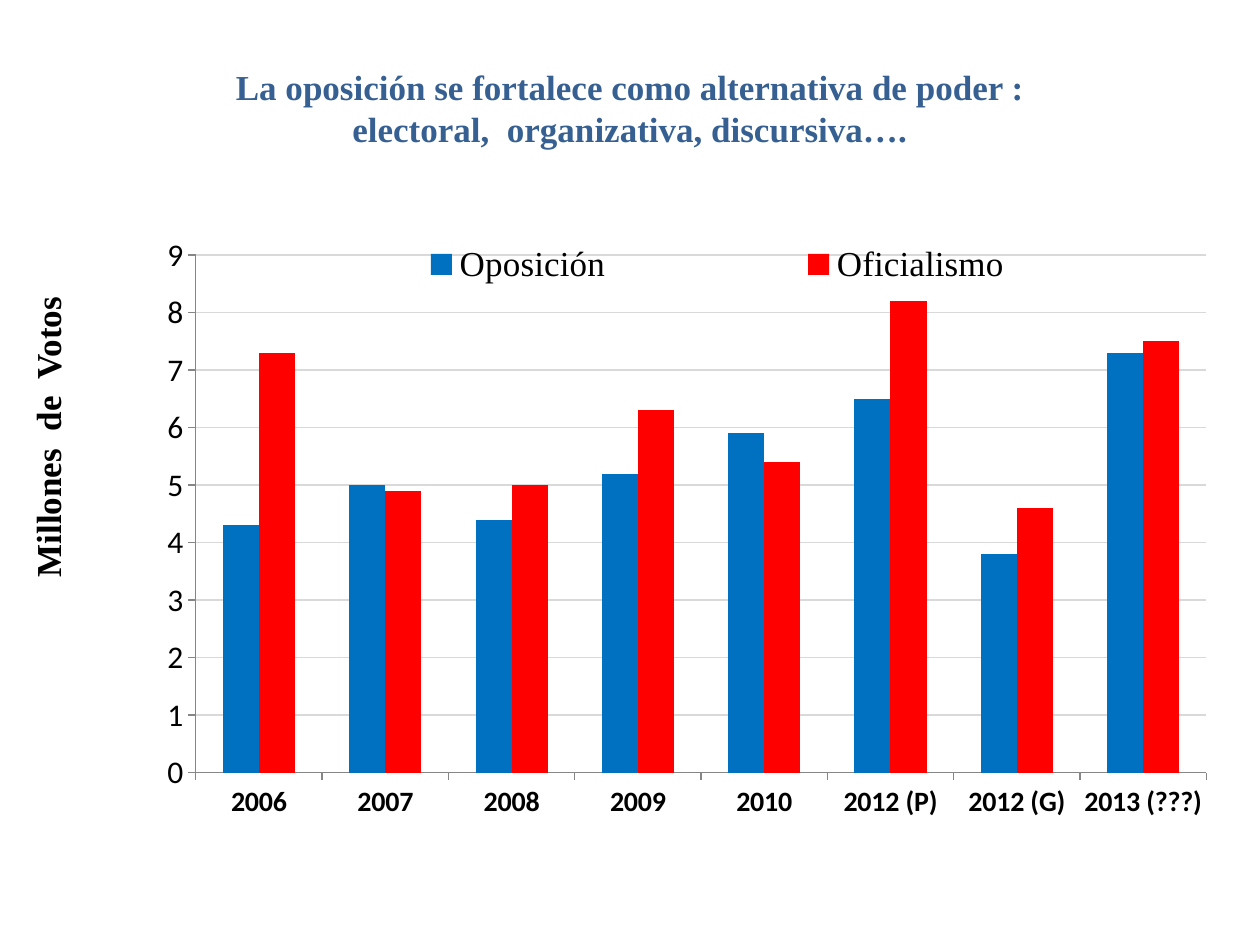
from dataclasses import dataclass

from lxml import etree
from pptx import Presentation
from pptx.chart.data import CategoryChartData
from pptx.dml.color import RGBColor
from pptx.enum.chart import XL_CHART_TYPE, XL_LEGEND_POSITION, XL_TICK_MARK
from pptx.enum.text import MSO_ANCHOR, PP_ALIGN
from pptx.oxml.ns import qn
from pptx.util import Pt

COLUMNS = XL_CHART_TYPE.COLUMN_CLUSTERED
TOP = XL_LEGEND_POSITION.TOP
OUTSIDE = XL_TICK_MARK.OUTSIDE
MIDDLE, ANCHOR_TOP = MSO_ANCHOR.MIDDLE, MSO_ANCHOR.TOP
CENTER, LEFT = PP_ALIGN.CENTER, PP_ALIGN.LEFT

PX = 914400 / 126
SERIF, SANS = "Times New Roman", "Calibri"
COLORS = {
    "title": "376092",
    "text": "000000",
    "grid": "D9D9D9",
    "axis": "868686",
    "opposition": "0070C0",
    "government": "FF0000",
}
YEARS = ["2006", "2007", "2008", "2009", "2010", "2012 (P)", "2012 (G)", "2013 (???)"]


@dataclass
class Label:
    text: str
    box: tuple[int, int, int, int]
    color: str
    align: PP_ALIGN
    anchor: MSO_ANCHOR
    vert: str = "horz"


@dataclass
class VoteSeries:
    name: str
    color: str
    values: tuple[float, ...]


LABELS = [
    Label("La oposición se fortalece como alternativa de poder :\v"
          "electoral,  organizativa, discursiva….",
          (63, 38, 1134, 140), "title", CENTER, MIDDLE),
    Label("Millones  de  Votos", (20, 236, 68, 354), "text", LEFT, ANCHOR_TOP, "vert270"),
]
SERIES = [
    VoteSeries("Oposición", "opposition", (4.3, 5, 4.4, 5.2, 5.9, 6.5, 3.8, 7.3)),
    VoteSeries("Oficialismo", "government", (7.3, 4.9, 5, 6.3, 5.4, 8.2, 4.6, 7.5)),
]
CHART_BOX = (108, 236, 1099, 624)
PLOT_LAYOUT = {"x": 0.08, "y": 0.03, "w": 0.92, "h": 0.83}
LEGEND_LAYOUT = {"x": 0.12, "y": 0.01, "w": 0.87, "h": 0.07}


def emu(box: tuple[int, ...]) -> list[int]:
    """Turn px lengths into EMU."""
    return [round(v * PX) for v in box]


def rgb(name: str) -> RGBColor:
    """Look up a named colour."""
    return RGBColor.from_string(COLORS[name])


def set_font(font, size: int, name: str, color: str, bold: bool = False) -> None:
    """Set size, face, colour and weight."""
    font.size, font.name, font.bold = Pt(size), name, bold
    font.color.rgb = rgb(color)


def add_label(s, label: Label) -> None:
    """Draw a bold serif text box."""
    tf = s.shapes.add_textbox(*emu(label.box)).text_frame
    tf.word_wrap = True
    tf.vertical_anchor = label.anchor
    tf._txBody.bodyPr.set("vert", label.vert)
    tf.text = label.text
    p = tf.paragraphs[0]
    p.alignment = label.align
    for r in p.runs:
        set_font(r.font, 20, SERIF, label.color, True)


def set_layout(parent, fractions: dict[str, float], before: str, inner: bool = False) -> None:
    """Place a chart part by fractions of the chart area."""
    for old in parent.findall(qn("c:layout")):
        parent.remove(old)
    layout = etree.Element(qn("c:layout"))
    manual = etree.SubElement(layout, qn("c:manualLayout"))
    if inner:
        etree.SubElement(manual, qn("c:layoutTarget")).set("val", "inner")
    for key in "xy":
        etree.SubElement(manual, qn(f"c:{key}Mode")).set("val", "edge")
    for key, value in fractions.items():
        etree.SubElement(manual, qn(f"c:{key}")).set("val", str(value))
    parent.find(qn(before)).addprevious(layout)


def style_axis(axis, size: int, bold: bool) -> None:
    """Set an axis line, its ticks and its label font."""
    axis.major_tick_mark = OUTSIDE
    axis.format.line.color.rgb = rgb("axis")
    axis.format.line.width = Pt(0.75)
    set_font(axis.tick_labels.font, size, SANS, "text", bold)


def add_votes_chart(s, series: list[VoteSeries]) -> None:
    """Draw the clustered columns of votes per election."""
    data = CategoryChartData()
    data.categories = YEARS
    for item in series:
        data.add_series(item.name, item.values)
    chart = s.shapes.add_chart(COLUMNS, *emu(CHART_BOX), data).chart
    chart.has_title = False
    set_font(chart.font, 16, SANS, "text")

    plot = chart.plots[0]
    plot.vary_by_categories = False
    plot.gap_width, plot.overlap = 150, 0
    for item, bars in zip(series, plot.series):
        bars.format.fill.solid()
        bars.format.fill.fore_color.rgb = rgb(item.color)

    style_axis(chart.category_axis, 16, True)
    axis = chart.value_axis
    style_axis(axis, 18, False)
    axis.minimum_scale, axis.maximum_scale, axis.major_unit = 0, 9, 1
    axis.tick_labels.number_format = "0"
    axis.tick_labels.number_format_is_linked = False
    axis.major_gridlines.format.line.color.rgb = rgb("grid")
    axis.major_gridlines.format.line.width = Pt(0.75)

    chart.has_legend = True
    legend = chart.legend
    legend.position = TOP
    legend.include_in_layout = True
    set_font(legend.font, 20, SERIF, "text")
    set_layout(legend._element, LEGEND_LAYOUT, "c:overlay")
    set_layout(chart._chartSpace.chart.plotArea, PLOT_LAYOUT, "c:barChart", True)


def main() -> None:
    """Build the slide and save it."""
    prs = Presentation()
    prs.slide_width, prs.slide_height = emu((1260, 945))
    s = prs.slides.add_slide(prs.slide_layouts[6])
    add_votes_chart(s, SERIES)
    for label in LABELS:
        add_label(s, label)
    prs.save("out.pptx")


if __name__ == "__main__":
    main()
